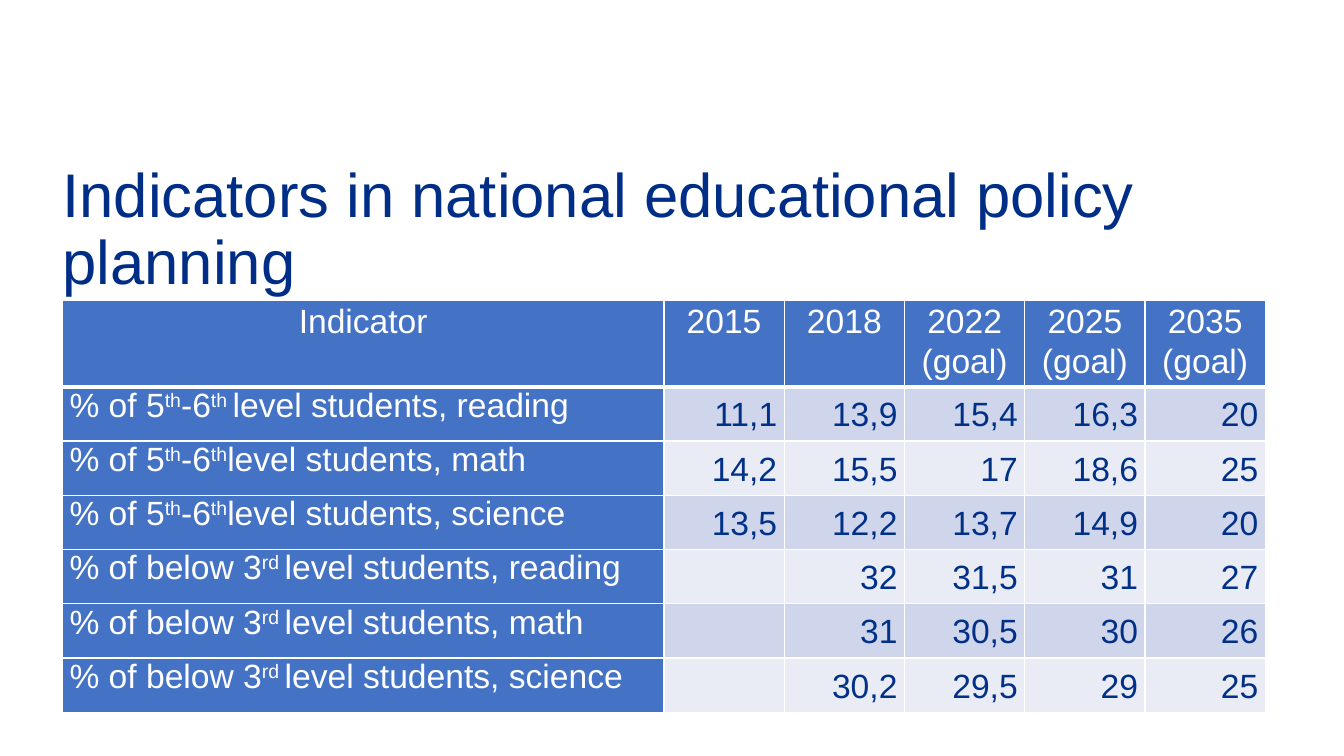
from dataclasses import dataclass

from lxml.etree import SubElement
from pptx import Presentation
from pptx.dml.color import RGBColor
from pptx.enum.text import MSO_ANCHOR, PP_ALIGN
from pptx.oxml.ns import qn
from pptx.util import Inches, Pt


@dataclass(frozen=True)
class Theme:
    """Colours, font and type sizes of the slide."""
    font: str = "Arial"
    title: str = "002E87"
    value: str = "003087"
    white: str = "FFFFFF"
    header: str = "4472C4"
    bands: tuple = ("CFD5EA", "E9EBF5")
    title_size: int = 44
    table_size: int = 24


THEME = Theme()
TITLE = "Indicators in national educational policy planning"
HEADINGS = ["Indicator", "2015", "2018", "2022 (goal)", "2025\v(goal)", "2035\v(goal)"]
INDICATORS = [
    ["% of 5^th^-6^th ^level students, reading", "11,1", "13,9", "15,4", "16,3", "20"],
    ["% of 5^th^-6^th^level students, math", "14,2", "15,5", "17", "18,6", "25"],
    ["% of 5^th^-6^th^level students, science", "13,5", "12,2", "13,7", "14,9", "20"],
    ["% of below 3^rd ^level students, reading", "", "32", "31,5", "31", "27"],
    ["% of below 3^rd ^level students, math", "", "31", "30,5", "30", "26"],
    ["% of below 3^rd ^level students, science", "", "30,2", "29,5", "29", "25"],
]


def style_font(font, size, colour):
    """Apply the theme font with a size and colour."""
    font.name = THEME.font
    font.size = Pt(size)
    font.bold = False
    font.color.rgb = RGBColor.from_string(colour)


def add_title(page, left, top, width, height):
    """Place the title at the top of its box."""
    box = page.shapes.add_textbox(left, top, width, height)
    frame = box.text_frame
    frame.word_wrap = True
    frame.margin_left = frame.margin_right = frame.margin_top = frame.margin_bottom = 0
    frame.text = TITLE
    para = frame.paragraphs[0]
    para.line_spacing = 0.9
    style_font(para.runs[0].font, THEME.title_size, THEME.title)


def set_borders(cell, bottom):
    """Draw white cell borders with a given bottom width in points."""
    properties = cell._tc.get_or_add_tcPr()
    for side, points in zip("LRTB", (1, 1, 1, bottom)):
        line = SubElement(properties, qn(f"a:ln{side}"), w=str(Pt(points)))
        fill = SubElement(line, qn("a:solidFill"))
        SubElement(fill, qn("a:srgbClr"), val=THEME.white)


def write_label(para, label):
    """Write a row label, raising the parts between carets."""
    for index, part in enumerate(label.split("^")):
        span = para.add_run()
        span.text = part
        style_font(span.font, THEME.table_size, THEME.white)
        if index % 2:
            span._r.get_or_add_rPr().set("baseline", "30000")


def fill_cell(cell, text, row, column):
    """Fill and format one cell according to its place in the table."""
    is_header, is_label = row == 0, column == 0
    set_borders(cell, 3 if is_header else 1)
    cell.fill.solid()
    colour = THEME.header if is_header or is_label else THEME.bands[(row - 1) % 2]
    cell.fill.fore_color.rgb = RGBColor.from_string(colour)
    cell.margin_left = cell.margin_right = Inches(0.07)
    cell.margin_top = cell.margin_bottom = 0
    para = cell.text_frame.paragraphs[0]
    if is_label and not is_header:
        write_label(para, text)
        return
    cell.vertical_anchor = MSO_ANCHOR.TOP if is_header else MSO_ANCHOR.MIDDLE
    para.text = text
    para.alignment = PP_ALIGN.CENTER if is_header else PP_ALIGN.RIGHT
    para.line_spacing = 1.07
    para.space_after = Pt(8)
    for span in para.runs:
        style_font(span.font, THEME.table_size, THEME.white if is_header else THEME.value)


def add_indicator_table(page, left, top, width, height):
    """Place the table: half its width for labels, a tenth for each year."""
    records = [HEADINGS] + INDICATORS
    table = page.shapes.add_table(
        len(records), len(HEADINGS), left, top, width, height).table
    for index, column in enumerate(table.columns):
        column.width = int(width * (0.1 if index else 0.5))
    for index, row in enumerate(table.rows):
        row.height = int(height * (0.137 if index else 0.178))
    for row, record in enumerate(records):
        for column, text in enumerate(record):
            fill_cell(table.cell(row, column), text, row, column)


def main():
    """Build and save the deck."""
    deck = Presentation()
    deck.slide_width, deck.slide_height = Inches(13.33), Inches(7.5)
    page = deck.slides.add_slide(deck.slide_layouts[6])
    left = Inches(0.62)
    add_title(page, left, Inches(1.63), Inches(12.1), Inches(1.12))
    add_indicator_table(page, left, Inches(2.98), Inches(11.93), Inches(3.93))
    deck.save("out.pptx")


if __name__ == "__main__":
    main()
